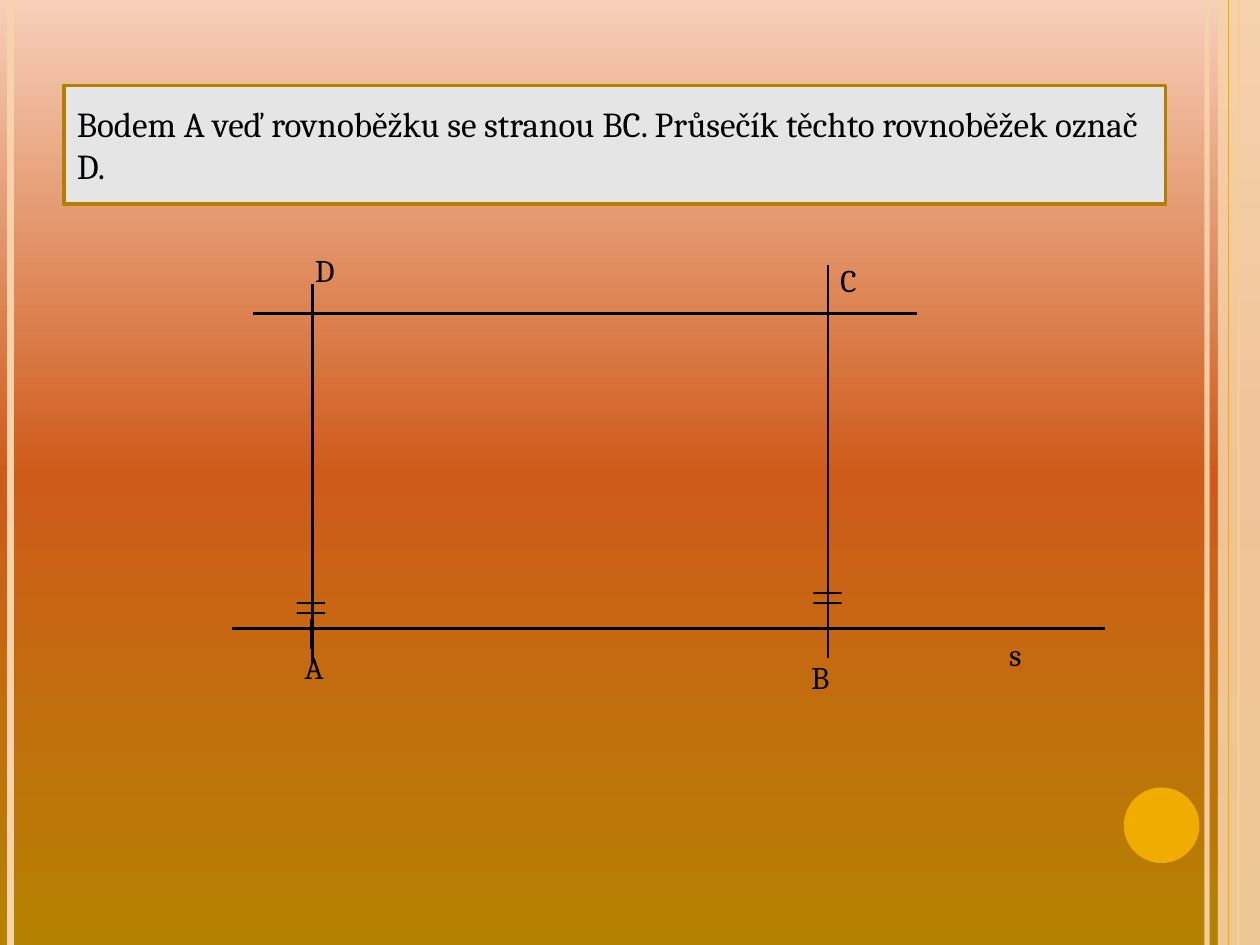
from copy import deepcopy
from typing import NamedTuple

from pptx import Presentation
from pptx import util as u
from pptx.dml.color import RGBColor
from pptx.enum import shapes, text
from pptx.oxml import ns
from pptx.oxml.xmlchemy import OxmlElement

COLORS = {
    "top": "F6CFB9", "middle": "CF5B1B", "bottom": "B48200",
    "stripe": "F6D3AB", "gold": "F0AD00",
    "panel": "E5E5E6", "border": "B28000", "ink": "000000",
}
FONT = "Cambria"
WIDTH, HEIGHT = 720, 540
LEFT_X, RIGHT_X = 178.5, 473.2
TOP_Y, BASE_Y = 179.2, 359.2


class Line(NamedTuple):
    x1: float
    y1: float
    x2: float
    y2: float
    weight: float = 1.5
    color: str = "ink"
    opacity: int = 100


class Label(NamedTuple):
    text: str
    left: float
    top: float
    width: float
    rotation: int = 0


def stripe(x: float, weight: float, color: str, opacity: int = 100) -> Line:
    return Line(x, 0, x, HEIGHT, weight, color, opacity)


BACK_STRIPES = [
    stripe(689.8, 3, "stripe", 93),
    stripe(6, 4.5, "stripe"),
    stripe(707.8, 1.5, "gold"),
]
FRONT_STRIPE = stripe(702, 0.75, "gold")

CONSTRUCTION = [
    Line(177.8, 353.5, 177.8, 370.8, 1),
    Line(473, 353.5, 473, 375.8, 1),
    Line(468, TOP_Y, 478.8, TOP_Y, 1),
    Line(132.5, BASE_Y, 631.4, BASE_Y),
    Line(144.7, TOP_Y, 524.2, TOP_Y),
    Line(RIGHT_X, 151.2, RIGHT_X, 366.5),
    Line(LEFT_X, 162, LEFT_X, 378),
]
LABELS = [
    Label("s", 569.5, 359.3, 39.6),
    Label("A", 167, 366.5, 39.6),
    Label("B", 456.5, 372.2, 45.4),
    Label("C", 473.2, 145.4, 17.3),
    Label("D", 172.8, 139.7, 39.6),
    Label("||", 153.4, 323.3, 45.4, 270),
    Label("||", 448.6, 317.5, 45.4, 270),
]


def rgb(name: str) -> RGBColor:
    return RGBColor.from_string(COLORS[name])


def set_opacity(shape, percent: int) -> None:
    """Make the first colour of a shape partly transparent."""
    if percent < 100:
        alpha = OxmlElement("a:alpha")
        alpha.set("val", str(percent * 1000))
        shape.element.spPr.find(".//" + ns.qn("a:srgbClr")).append(alpha)


def paint_background(slide) -> None:
    fill = slide.background.fill
    fill.gradient()
    fill.gradient_angle = 270
    stop_list = slide.element.find(".//" + ns.qn("a:gsLst"))
    stop_list.append(deepcopy(stop_list[-1]))
    stops = zip(fill.gradient_stops, (0, 0.5, 1), ("top", "middle", "bottom"))
    for stop, position, color in stops:
        stop.position = position
        stop.color.rgb = rgb(color)


def draw_line(slide, line: Line) -> None:
    connector = slide.shapes.add_connector(
        shapes.MSO_CONNECTOR.STRAIGHT,
        u.Pt(line.x1), u.Pt(line.y1), u.Pt(line.x2), u.Pt(line.y2))
    connector.line.width = u.Pt(line.weight)
    connector.line.color.rgb = rgb(line.color)
    set_opacity(connector, line.opacity)
    connector.element.spPr.append(OxmlElement("a:effectLst"))


def draw_shape(slide, kind, left: float, top: float, width: float,
               height: float, color: str, opacity: int = 100) -> None:
    shape = slide.shapes.add_shape(
        kind, u.Pt(left), u.Pt(top), u.Pt(width), u.Pt(height))
    shape.shadow.inherit = False
    shape.fill.solid()
    shape.fill.fore_color.rgb = rgb(color)
    shape.line.fill.background()
    set_opacity(shape, opacity)


def write_text(shape, content: str, *, size: float = 18, color: str = "ink",
               anchor=text.MSO_ANCHOR.TOP,
               auto_size=text.MSO_AUTO_SIZE.NONE) -> None:
    frame = shape.text_frame
    frame.word_wrap = True
    frame.auto_size = auto_size
    frame.vertical_anchor = anchor
    paragraph = frame.paragraphs[0]
    paragraph.alignment = text.PP_ALIGN.LEFT
    run = paragraph.add_run()
    run.text = content
    run.font.name = FONT
    run.font.size = u.Pt(size)
    run.font.color.rgb = rgb(color)


def draw_label(slide, label: Label) -> None:
    box = slide.shapes.add_textbox(
        u.Pt(label.left), u.Pt(label.top), u.Pt(label.width), u.Pt(29))
    box.rotation = label.rotation
    write_text(box, label.text, auto_size=text.MSO_AUTO_SIZE.SHAPE_TO_FIT_TEXT)


def format_title(slide) -> None:
    title = slide.shapes.title
    title.left, title.top = u.Pt(36.7), u.Pt(48.9)
    title.width, title.height = u.Pt(629.4), u.Pt(67.8)
    title.fill.solid()
    title.fill.fore_color.rgb = rgb("panel")
    title.line.color.rgb = rgb("border")
    title.line.width = u.Pt(2)
    write_text(
        title,
        "Bodem A veď rovnoběžku se stranou BC. "
        "Průsečík těchto rovnoběžek označ D.",
        size=20, anchor=text.MSO_ANCHOR.MIDDLE)


def main() -> None:
    presentation = Presentation()
    presentation.slide_width = u.Pt(WIDTH)
    presentation.slide_height = u.Pt(HEIGHT)
    slide = presentation.slides.add_slide(presentation.slide_layouts[5])
    paint_background(slide)
    format_title(slide)

    for line in BACK_STRIPES:
        draw_line(slide, line)
    draw_shape(slide, shapes.MSO_SHAPE.RECTANGLE,
               696, 0, 24, HEIGHT, "stripe", 87)
    draw_line(slide, FRONT_STRIPE)
    draw_shape(slide, shapes.MSO_SHAPE.OVAL, 642.2, 450, 43.2, 43.2, "gold")

    for line in CONSTRUCTION:
        draw_line(slide, line)
    for label in LABELS:
        draw_label(slide, label)
    presentation.save("out.pptx")


if __name__ == "__main__":
    main()
